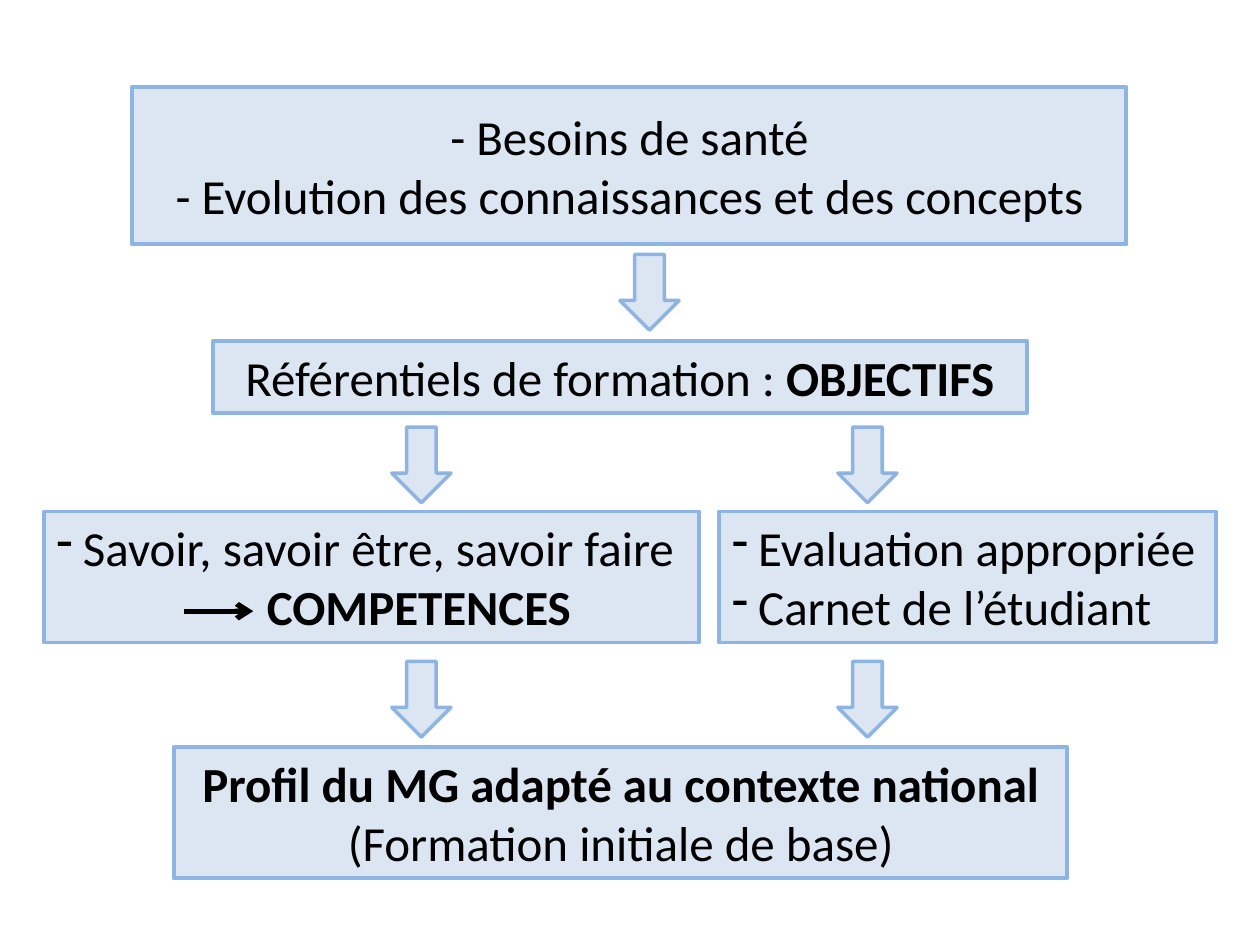
from pptx import Presentation
from pptx.dml.color import RGBColor
from pptx.enum.shapes import MSO_CONNECTOR as Link, MSO_SHAPE as Shape
from pptx.enum.text import MSO_ANCHOR as Anchor, MSO_AUTO_SIZE as Fit, PP_ALIGN as Align
from pptx.oxml.ns import qn
from pptx.util import Inches, Pt
from lxml.etree import SubElement

PALE = RGBColor(0xDC, 0xE6, 0xF2)
BLUE = RGBColor(0x8E, 0xB4, 0xE3)
BLACK = RGBColor(0, 0, 0)

WIDE, HIGH = 10, 7.5
ONE, TWO = 0.57, 1.04           # heights of boxes with one and two lines
ROWS = (0.69, 2.71, 4.06, 5.93)  # tops of the four levels
COLS = (3.11, 6.65)              # lefts of the two arrow columns
DASH = 0.21                      # hanging indent of a dash item


def paint(shape, line):
    shape.fill.solid()
    shape.fill.fore_color.rgb = PALE
    shape.line.color.rgb = BLUE
    shape.line.width = Pt(line)


def place(shape, box):
    shape.left, shape.top, shape.width, shape.height = map(Inches, box)


def indent(para, left, dash=False):
    props = para._p.get_or_add_pPr()
    props.set("marL", str(Inches(left)))
    props.set("indent", str(Inches(-left if dash else 0)))
    if dash:
        SubElement(props, qn("a:buFontTx"))
        SubElement(props, qn("a:buChar")).set("char", "-")


def write(frame, lines, align):
    """Fill a frame with lines, each a (plain, bold) pair of texts."""
    frame.word_wrap = True
    for i, (plain, bold) in enumerate(lines):
        para = frame.add_paragraph() if i else frame.paragraphs[0]
        para.text = plain
        if bold:
            run = para.add_run()
            run.text = bold
            run.font.bold = True
        para.alignment = align
        for run in para.runs:
            run.font.size, run.font.name = Pt(28), "Calibri"
            run.font.color.rgb = BLACK


def head(slide, box, text):
    title = slide.shapes.title
    place(title, box)
    paint(title, 2.25)
    write(title.text_frame, [(text, "")], Align.CENTER)
    title.text_frame.auto_size = Fit.NONE
    title.text_frame.vertical_anchor = Anchor.MIDDLE


def panel(slide, box, lines, align=Align.CENTER):
    shape = slide.shapes.add_textbox(*map(Inches, box))
    paint(shape, 2.25)
    write(shape.text_frame, lines, align)
    shape.text_frame.auto_size = Fit.SHAPE_TO_FIT_TEXT
    return shape.text_frame.paragraphs


def skills(slide, box):
    left, top, _, high = box
    first, last = panel(slide, box, [
        ("Savoir, savoir être, savoir faire", ""), ("", "COMPETENCES")], Align.LEFT)
    indent(first, DASH, True)
    indent(last, 1.67)
    # Thin arrow before the second line
    y = Inches(top + 0.76 * high)
    arrow = slide.shapes.add_connector(
        Link.STRAIGHT, Inches(left + 1.11), y, Inches(left + 1.66), y)
    arrow.line.color.rgb = BLACK
    arrow.line.width = Pt(3)
    SubElement(arrow.line._get_or_add_ln(), qn("a:tailEnd")).set("type", "arrow")
    SubElement(arrow._element.spPr, qn("a:effectLst"))


def checks(slide, box):
    for para in panel(slide, box, [
            ("Evaluation appropriée", ""), ("Carnet de l’étudiant", "")], Align.LEFT):
        indent(para, DASH, True)


def down(slide, left, top):
    arrow = slide.shapes.add_shape(
        Shape.DOWN_ARROW, *map(Inches, (left, top, 0.47, 0.6)))
    arrow.shadow.inherit = False
    paint(arrow, 2)


def main():
    deck = Presentation()
    deck.slide_width, deck.slide_height = Inches(WIDE), Inches(HIGH)
    slide = deck.slides.add_slide(deck.slide_layouts[5])

    # Four levels, from needs to profile
    head(slide, (1.05, ROWS[0], 7.89, 1.25),
         "- Besoins de santé\v- Evolution des connaissances et des concepts")
    panel(slide, (1.69, ROWS[1], 6.46, ONE),
          [("Référentiels de formation : ", "OBJECTIFS")])
    skills(slide, (0.35, ROWS[2], 5.2, TWO))
    checks(slide, (5.71, ROWS[2], 3.94, TWO))
    panel(slide, (1.38, ROWS[3], 7.09, TWO),
          [("", "Profil du MG adapté au contexte national"),
           ("(Formation initiale de base)", "")])

    # Block arrows between the levels
    down(slide, 4.92, 2.02)
    for left in COLS:
        for top in (3.39, 5.25):
            down(slide, left, top)

    deck.save("out.pptx")


if __name__ == "__main__":
    main()
